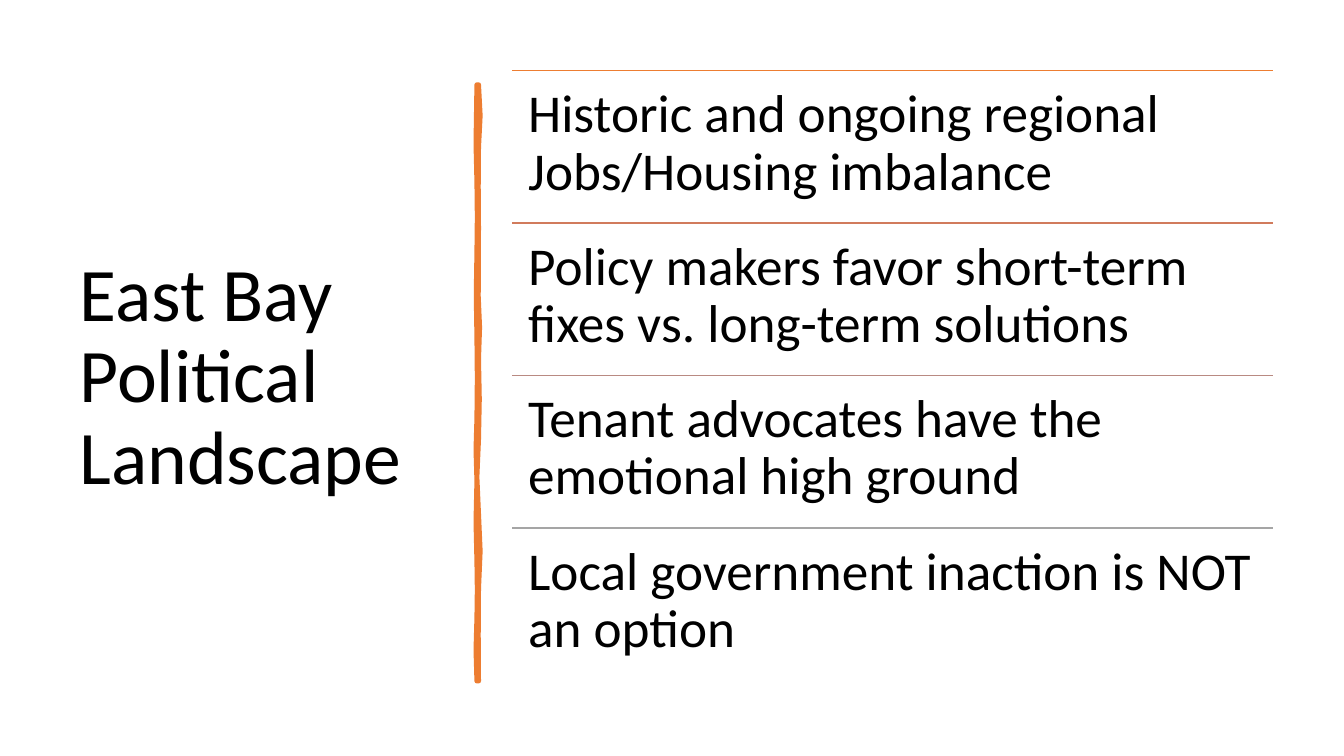
"""Build the East Bay political landscape slide with a title, a brush stroke and four ruled statements."""
from dataclasses import dataclass

import lxml.etree
import pptx
import pptx.dml.color
import pptx.enum.shapes
import pptx.enum.text
import pptx.oxml.ns
import pptx.shapes.connector
import pptx.shapes.freeform
import pptx.slide
import pptx.util


@dataclass(frozen=True)
class Theme:
    font: str = "Calibri"
    text: str = "000000"
    background: str = "FFFFFF"
    accent: str = "ED7D31"
    title_size: float = 54
    statement_size: float = 38
    line_spacing: float = 0.9
    stroke_width: float = 3.25
    rule_width: float = 1


@dataclass(frozen=True)
class Box:
    left: float
    top: float
    width: float
    height: float


@dataclass(frozen=True)
class Statement:
    text: str
    rule_color: str


THEME = Theme()
SLIDE_WIDTH = pptx.util.Inches(13.333)
SLIDE_HEIGHT = pptx.util.Inches(7.5)
TITLE_BOX = Box(5.18, 9.33, 28.05, 81.47)
FIRST_ROW = Box(38.1, 9.33, 56.63, 20.17)

STATEMENTS = (
    Statement("Historic and ongoing regional Jobs/Housing imbalance", THEME.accent),
    Statement("Policy makers favor short-term fixes vs. long-term solutions", "D17B5C"),
    Statement("Tenant advocates have the emotional high ground", "B98A82"),
    Statement("Local government inaction is NOT an option", "A5A5A5"),
)

STROKE_RIGHT_EDGE = (
    (35.62, 11.2), (35.74, 15.3), (35.62, 19.5), (35.6, 24.7),
    (35.62, 30.1), (35.6, 39.2), (35.7, 43.3), (35.62, 47.5),
    (35.68, 52.8), (35.62, 58.1), (35.5, 63.1), (35.62, 68),
    (35.74, 72.9), (35.62, 77.9), (35.6, 84), (35.62, 90.1),
)
STROKE_LEFT_EDGE = (
    (35.47, 90.1), (35.4, 86), (35.47, 81.7), (35.5, 78),
    (35.47, 74.3), (35.4, 69), (35.47, 63.6), (35.4, 59.5),
    (35.47, 55.3), (35.5, 50), (35.47, 44.7), (35.42, 39),
    (35.47, 33.3), (35.5, 28.7), (35.47, 24.1), (35.4, 19),
    (35.47, 11.2),
)


def across(percent: float) -> pptx.util.Emu:
    """Convert a percentage of the slide width to a length."""
    return pptx.util.Emu(round(SLIDE_WIDTH * percent / 100))


def down(percent: float) -> pptx.util.Emu:
    """Convert a percentage of the slide height to a length."""
    return pptx.util.Emu(round(SLIDE_HEIGHT * percent / 100))


def rgb(color: str) -> pptx.dml.color.RGBColor:
    """Convert a hexadecimal colour to an RGB value."""
    return pptx.dml.color.RGBColor.from_string(color)


def add_text(slide: pptx.slide.Slide, box: Box, text: str, size: float,
             anchor: pptx.enum.text.MSO_ANCHOR, inset_x: float, inset_y: float) -> None:
    """Add one wrapped paragraph inside a box."""
    shape = slide.shapes.add_textbox(
        across(box.left), down(box.top), across(box.width), down(box.height))
    frame = shape.text_frame
    frame.word_wrap = True
    frame.vertical_anchor = anchor
    frame.margin_left = frame.margin_right = pptx.util.Inches(inset_x)
    frame.margin_top = frame.margin_bottom = pptx.util.Inches(inset_y)
    paragraph = frame.paragraphs[0]
    paragraph.line_spacing = THEME.line_spacing
    run = paragraph.add_run()
    run.text = text
    run.font.name = THEME.font
    run.font.size = pptx.util.Pt(size)
    run.font.color.rgb = rgb(THEME.text)


def add_brush_stroke(slide: pptx.slide.Slide) -> pptx.shapes.freeform.FreeformBuilder:
    """Draw the uneven vertical stroke beside the title."""
    start, *outline = [(across(x), down(y)) for x, y in STROKE_RIGHT_EDGE + STROKE_LEFT_EDGE]
    builder = slide.shapes.build_freeform(*start)
    builder.add_line_segments(outline, close=True)
    shape = builder.convert_to_shape()
    shape.shadow.inherit = False
    shape.fill.solid()
    shape.fill.fore_color.rgb = rgb(THEME.accent)
    shape.line.color.rgb = rgb(THEME.accent)
    shape.line.width = pptx.util.Pt(THEME.stroke_width)
    line = shape.element.spPr.find(pptx.oxml.ns.qn("a:ln"))
    lxml.etree.SubElement(line, pptx.oxml.ns.qn("a:round"))
    return builder


def add_rule(slide: pptx.slide.Slide, row: Box, color: str) -> pptx.shapes.connector.Connector:
    """Draw the rule along the top of a row."""
    rule = slide.shapes.add_connector(
        pptx.enum.shapes.MSO_CONNECTOR.STRAIGHT,
        across(row.left), down(row.top), across(row.left + row.width), down(row.top))
    rule.line.color.rgb = rgb(color)
    rule.line.width = pptx.util.Pt(THEME.rule_width)
    lxml.etree.SubElement(rule.element.spPr, pptx.oxml.ns.qn("a:effectLst"))
    return rule


def main() -> None:
    """Compose and save the presentation."""
    presentation = pptx.Presentation()
    presentation.slide_width = SLIDE_WIDTH
    presentation.slide_height = SLIDE_HEIGHT
    slide = presentation.slides.add_slide(presentation.slide_layouts[6])
    slide.background.fill.solid()
    slide.background.fill.fore_color.rgb = rgb(THEME.background)

    add_text(slide, TITLE_BOX, "East Bay Political Landscape", THEME.title_size,
             pptx.enum.text.MSO_ANCHOR.MIDDLE, 0.1, 0.05)
    add_brush_stroke(slide)
    for index, statement in enumerate(STATEMENTS):
        row = Box(FIRST_ROW.left, FIRST_ROW.top + index * FIRST_ROW.height,
                  FIRST_ROW.width, FIRST_ROW.height)
        add_rule(slide, row, statement.rule_color)
        add_text(slide, row, statement.text, THEME.statement_size,
                 pptx.enum.text.MSO_ANCHOR.TOP, 0.16, 0.16)

    presentation.save("out.pptx")


if __name__ == "__main__":
    main()
